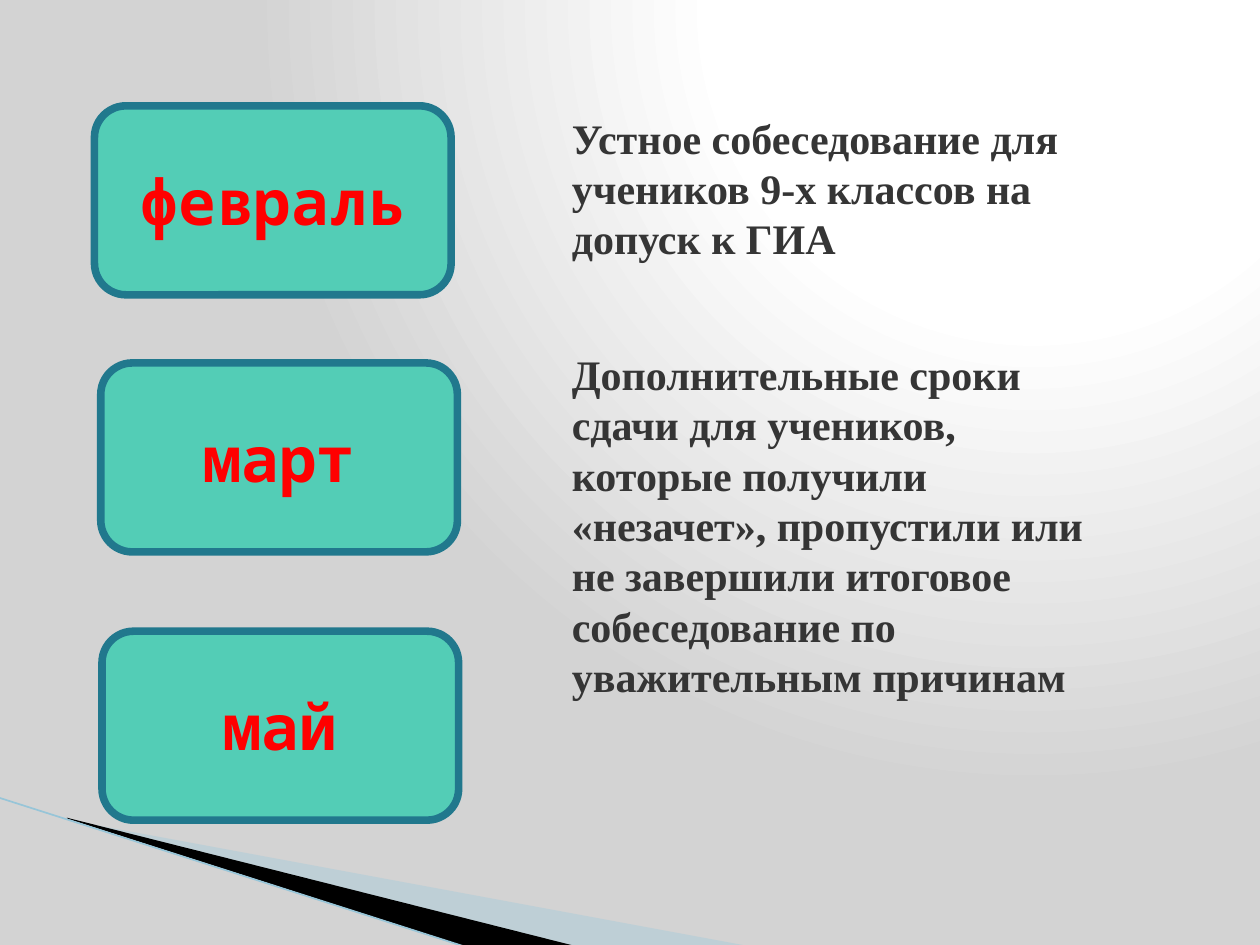
from dataclasses import dataclass

from lxml.etree import SubElement
from pptx import Presentation
from pptx.dml.color import RGBColor
from pptx.enum.shapes import MSO_CONNECTOR, MSO_SHAPE
from pptx.enum.text import MSO_ANCHOR, MSO_AUTO_SIZE, PP_ALIGN
from pptx.oxml.ns import qn
from pptx.slide import Slide
from pptx.util import Pt

COLORS = {
    "white": "FFFFFF",
    "gray": "D3D3D3",
    "pale_blue": "A0CBDC",
    "black": "000000",
    "edge": "97C5D8",
    "card": "53CDB6",
    "card_border": "21788D",
    "month": "FF0000",
    "note": "353535",
}
MONTH_FONT = {"name": "Noto Sans Mono", "size": Pt(36), "bold": True}
NOTE_FONT = {"name": "Times New Roman", "size": Pt(24), "bold": True}
CARD_WIDTH, CARD_HEIGHT = 203.8, 108
NOTE_LEFT = 319.7


@dataclass
class Month:
    label: str
    left: float
    top: float


@dataclass
class Note:
    text: str
    top: float
    width: float
    height: float


@dataclass
class Wedge:
    points: list[tuple[float, float]]
    color: str
    opacity: int = 100


MONTHS = [
    Month("февраль", 54, 60.5),
    Month("март", 57.6, 207.4),
    Month("май", 58.3, 360.7),
]
NOTES = [
    Note("Устное собеседование для учеников 9-х классов на допуск к ГИА", 60.5, 334.8, 94.3),
    Note(
        "Дополнительные сроки сдачи для учеников, которые получили «незачет», "
        "пропустили или не завершили итоговое собеседование по уважительным причинам",
        195.5, 317.5, 239.8,
    ),
]
WEDGES = [
    Wedge([(39.6, 468.7), (428.4, 540.7), (328.3, 540.7), (39.6, 468)], "pale_blue", 40),
    Wedge([(38.2, 467.3), (329, 540.7), (267.8, 541.4), (38.9, 468)], "black"),
]


def rgb(name: str) -> RGBColor:
    return RGBColor.from_string(COLORS[name])


def paint_background(slide: Slide) -> None:
    """Radial gradient centred near the top right."""
    slide.background.fill.gradient()
    gradient = slide.element.find(".//" + qn("a:gradFill"))
    for child in list(gradient):
        gradient.remove(child)
    stops = SubElement(gradient, qn("a:gsLst"))
    for percent, color in ((0, "white"), (40, "white"), (100, "gray")):
        stop = SubElement(stops, qn("a:gs"), pos=str(percent * 1000))
        SubElement(stop, qn("a:srgbClr"), val=COLORS[color])
    circle = SubElement(gradient, qn("a:path"), path="circle")
    SubElement(circle, qn("a:fillToRect"), l="65000", b="98000")


def draw_wedge(slide: Slide, wedge: Wedge) -> None:
    start, *others = [(Pt(x), Pt(y)) for x, y in wedge.points]
    builder = slide.shapes.build_freeform(*start)
    builder.add_line_segments(others, close=True)
    outline = builder.convert_to_shape()
    outline.shadow.inherit = False
    outline.line.fill.background()
    outline.fill.solid()
    outline.fill.fore_color.rgb = rgb(wedge.color)
    if wedge.opacity < 100:
        color = outline.element.spPr.find(qn("a:solidFill"))[0]
        SubElement(color, qn("a:alpha"), val=str(wedge.opacity * 1000))


def draw_edge(slide: Slide) -> None:
    edge = slide.shapes.add_connector(
        MSO_CONNECTOR.STRAIGHT, Pt(-0.7), Pt(455.8), Pt(267.1), Pt(541.4)
    )
    edge.line.color.rgb = rgb("edge")
    edge.line.width = Pt(0.95)
    SubElement(edge.element.spPr, qn("a:effectLst"))


def write(frame, text: str, font_format: dict, color: str):
    """Fill the frame's only paragraph and return it."""
    frame.word_wrap = True
    paragraph = frame.paragraphs[0]
    run = paragraph.add_run()
    run.text = text
    for attribute, value in font_format.items():
        setattr(run.font, attribute, value)
    run.font.color.rgb = rgb(color)
    return paragraph


def draw_month(slide: Slide, month: Month) -> None:
    card = slide.shapes.add_shape(
        MSO_SHAPE.ROUNDED_RECTANGLE,
        Pt(month.left), Pt(month.top), Pt(CARD_WIDTH), Pt(CARD_HEIGHT),
    )
    card.shadow.inherit = False
    card.fill.solid()
    card.fill.fore_color.rgb = rgb("card")
    card.line.color.rgb = rgb("card_border")
    card.line.width = Pt(4.33)
    card.text_frame.vertical_anchor = MSO_ANCHOR.MIDDLE
    label = write(card.text_frame, month.label, MONTH_FONT, "month")
    label.alignment = PP_ALIGN.CENTER


def draw_note(slide: Slide, note: Note) -> None:
    box = slide.shapes.add_textbox(
        Pt(NOTE_LEFT), Pt(note.top), Pt(note.width), Pt(note.height)
    )
    box.text_frame.auto_size = MSO_AUTO_SIZE.SHAPE_TO_FIT_TEXT
    paragraph = write(box.text_frame, note.text, NOTE_FONT, "note")
    paragraph.line_spacing = Pt(28.8)


def main() -> None:
    presentation = Presentation()
    presentation.slide_width, presentation.slide_height = Pt(720), Pt(540)
    slide = presentation.slides.add_slide(presentation.slide_layouts[6])
    paint_background(slide)
    for wedge in WEDGES:
        draw_wedge(slide, wedge)
    draw_edge(slide)
    for month in MONTHS:
        draw_month(slide, month)
    for note in NOTES:
        draw_note(slide, note)
    presentation.save("out.pptx")


if __name__ == "__main__":
    main()
